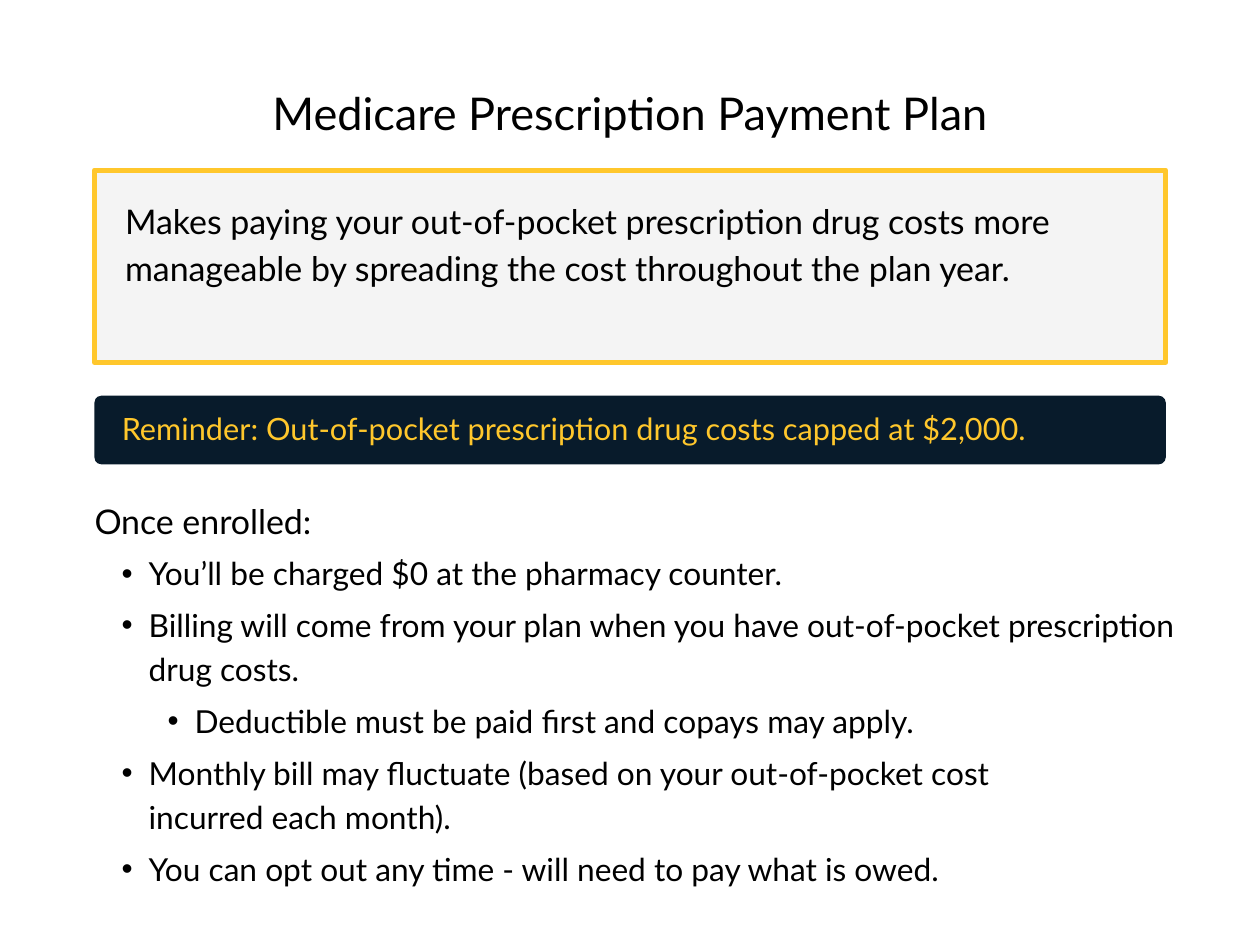
from pptx import Presentation
from pptx.dml.color import RGBColor
from pptx.enum.shapes import MSO_SHAPE
from pptx.enum.text import PP_ALIGN
from pptx.oxml.ns import qn
from pptx.util import Pt
from lxml.etree import SubElement

BLACK = RGBColor(0x00, 0x00, 0x00)
GOLD = RGBColor(0xFF, 0xC7, 0x2C)
NAVY = RGBColor(0x08, 0x1B, 0x2B)
PALE_GREY = RGBColor(0xF4, 0xF4, 0xF4)

FONT = "Lato"
MARGIN = 57.6
PANEL_WIDTH = 653
LIST_TOP = 334
LIST_LEADING = 27
LIST_GAP = 4.5
SUB_INDENT = 28
LIST_WIDTH = 693.5

# text, nesting depth, number of lines, box width
ENROLLED_POINTS = [
    ("You’ll be charged $0 at the pharmacy counter.", 0, 1, LIST_WIDTH),
    ("Billing will come from your plan when you have out-of-pocket "
     "prescription drug costs.", 0, 2, LIST_WIDTH),
    ("Deductible must be paid first and copays may apply.", 1, 1, LIST_WIDTH),
    ("Monthly bill may fluctuate (based on your out-of-pocket cost "
     "incurred each month).", 0, 2, 608.5),
    ("You can opt out any time - will need to pay what is owed.", 0, 1, LIST_WIDTH),
]


def add_bullet(paragraph, indent=33, hanging=16.5):
    properties = paragraph._p.get_or_add_pPr()
    properties.set("marL", str(Pt(indent)))
    properties.set("indent", str(-Pt(hanging)))
    SubElement(properties, qn("a:buFont"), typeface="Arial")
    SubElement(properties, qn("a:buChar"), char="•")


def add_text(slide, text, left, top, width, height, *, size, leading,
             color=BLACK, align=PP_ALIGN.LEFT, bullet=False):
    box = slide.shapes.add_textbox(Pt(left), Pt(top), Pt(width), Pt(height))
    frame = box.text_frame
    frame.word_wrap = True
    frame.margin_left = frame.margin_right = 0
    frame.margin_top = frame.margin_bottom = 0
    paragraph = frame.paragraphs[0]
    if bullet:
        add_bullet(paragraph)
    paragraph.alignment = align
    paragraph.line_spacing = Pt(leading)
    run = paragraph.add_run()
    run.text = text
    run.font.name = FONT
    run.font.size = Pt(size)
    run.font.color.rgb = color


def add_panel(slide, preset, top, height, fill, border=None):
    panel = slide.shapes.add_shape(preset, Pt(MARGIN), Pt(top),
                                   Pt(PANEL_WIDTH), Pt(height))
    panel.shadow.inherit = False
    panel.fill.solid()
    panel.fill.fore_color.rgb = fill
    if border is None:
        panel.line.fill.background()
    else:
        panel.line.color.rgb = border
        panel.line.width = Pt(3)
    return panel


def add_enrolled_list(slide):
    top = LIST_TOP
    for text, depth, lines, width in ENROLLED_POINTS:
        height = lines * LIST_LEADING
        add_text(slide, text, MARGIN + depth * SUB_INDENT, top, width, height,
                 size=19.3, leading=LIST_LEADING, bullet=True)
        top += height + LIST_GAP


def main():
    presentation = Presentation()
    presentation.slide_width = Pt(768)
    presentation.slide_height = Pt(576)
    slide = presentation.slides.add_slide(presentation.slide_layouts[6])

    add_text(slide, "Medicare Prescription Payment Plan", 70, 46.8, 628, 36.7,
             size=27.5, leading=38.5, align=PP_ALIGN.CENTER)

    add_panel(slide, MSO_SHAPE.RECTANGLE, 103.7, 117.3, PALE_GREY, GOLD)
    add_text(slide, "Makes paying your out-of-pocket prescription drug costs more "
             "manageable by spreading the cost throughout the plan year.",
             76.3, 118, 609, 84, size=20.7, leading=29)

    reminder = add_panel(slide, MSO_SHAPE.ROUNDED_RECTANGLE, 241.2, 41.8, NAVY)
    reminder.adjustments[0] = 0.1
    add_text(slide, "Reminder: Out-of-pocket prescription drug costs capped at $2,000.",
             74.2, 246.2, 641.5, 24.5, size=18.7, leading=26.2, color=GOLD)

    add_text(slide, "Once enrolled:", MARGIN, 301, 693.5, 27.4,
             size=20.7, leading=29)
    add_enrolled_list(slide)

    presentation.save("out.pptx")


if __name__ == "__main__":
    main()
